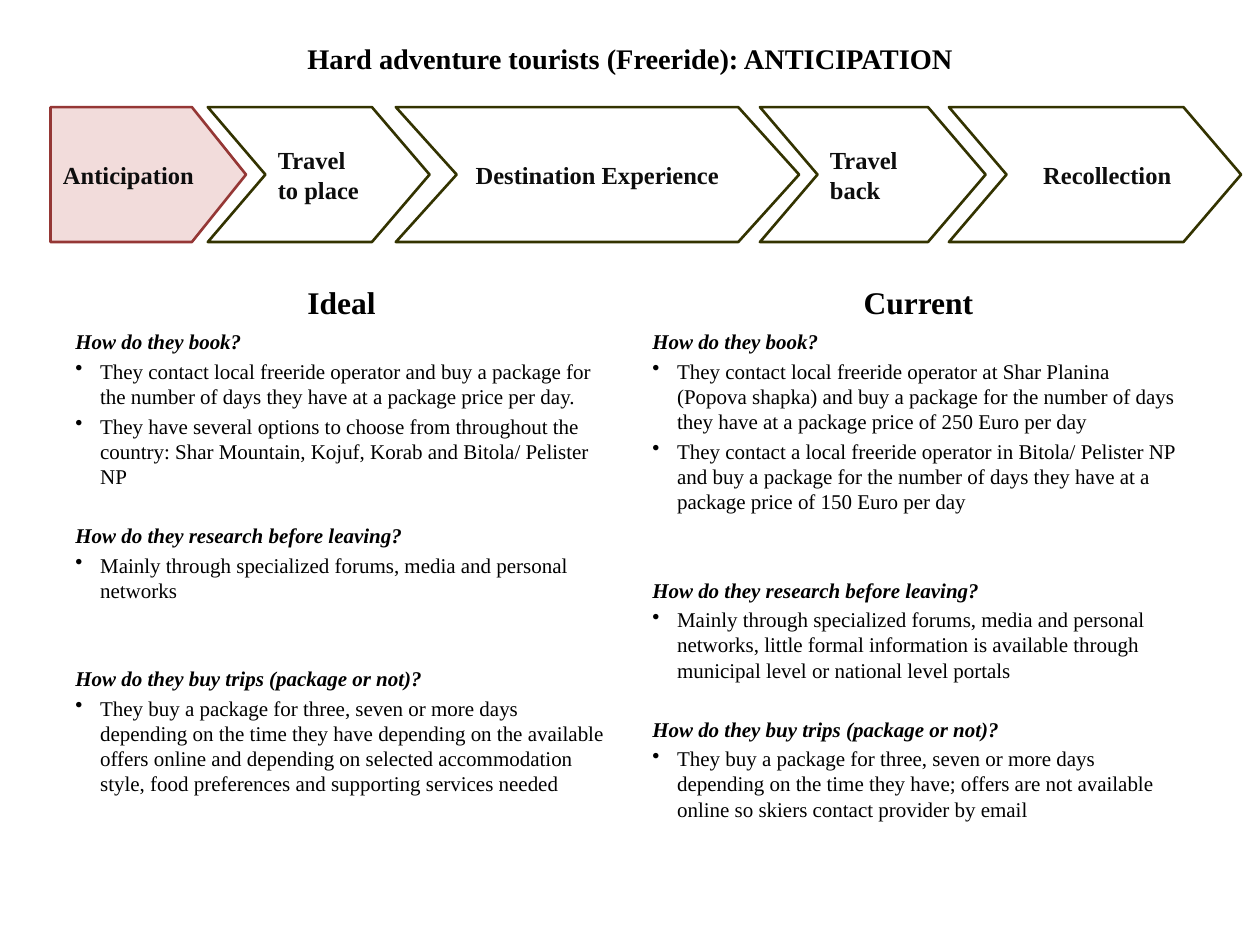
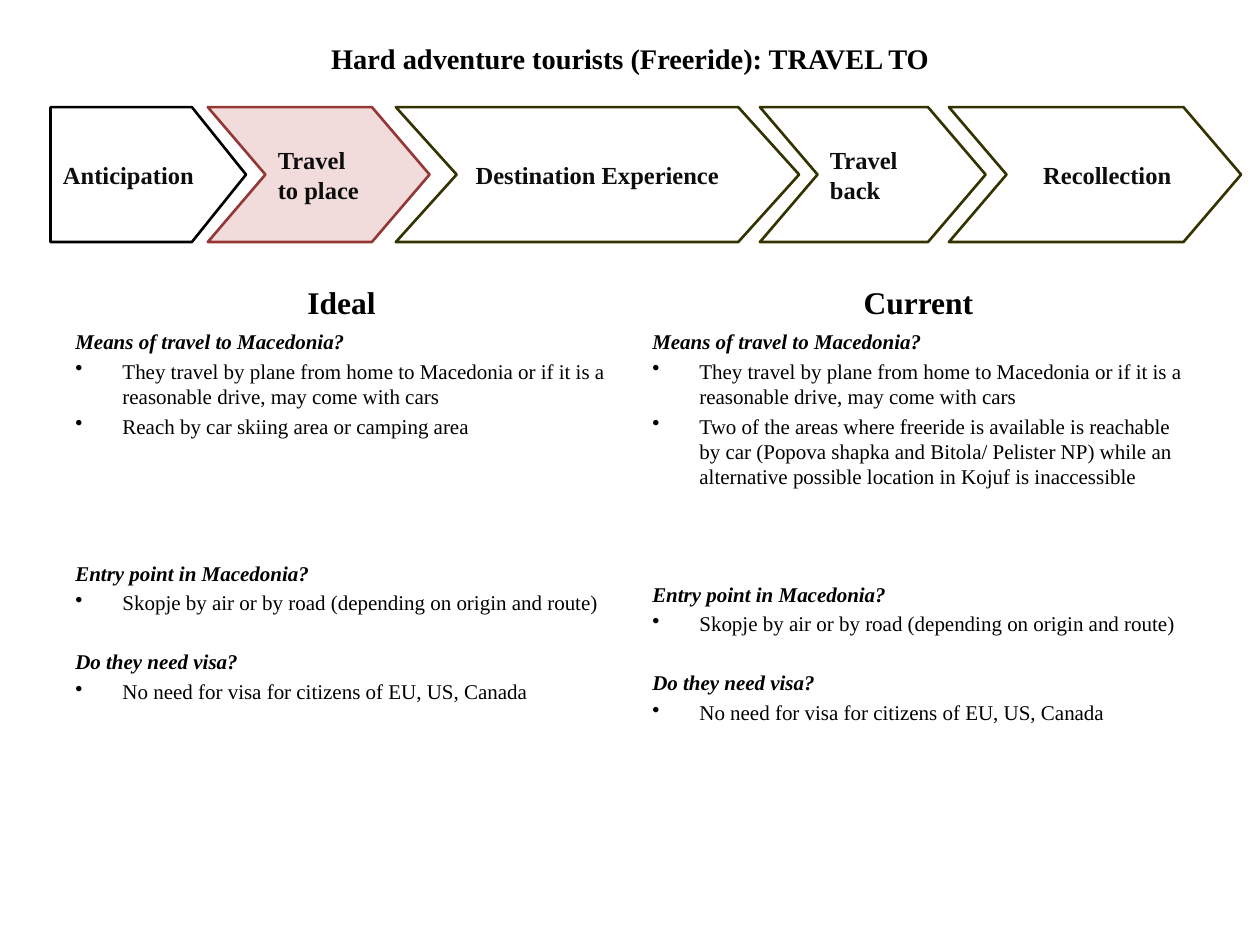
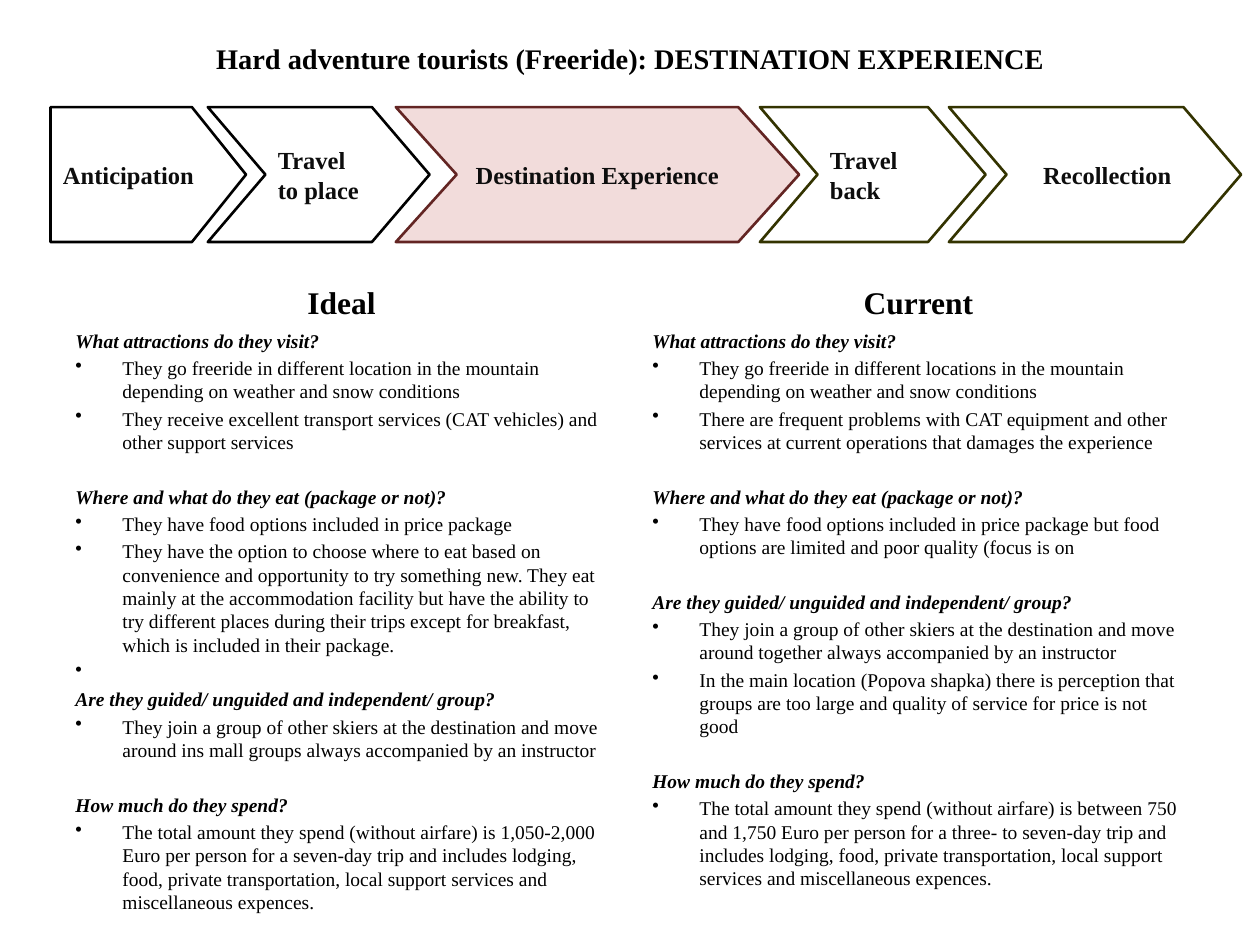
from dataclasses import dataclass

from lxml.etree import SubElement
from pptx import Presentation
from pptx.dml.color import RGBColor
from pptx.enum.shapes import MSO_SHAPE
from pptx.enum.text import MSO_ANCHOR, PP_ALIGN
from pptx.oxml.ns import qn
from pptx.util import Cm, Pt

FONT = "Times New Roman"
BLACK = RGBColor(0x00, 0x00, 0x00)
WHITE = RGBColor(0xFF, 0xFF, 0xFF)
CHARCOAL = RGBColor(0x0D, 0x0D, 0x0D)
OLIVE = RGBColor(0x33, 0x33, 0x00)
PINK = RGBColor(0xF2, 0xDC, 0xDB)
RED = RGBColor(0x95, 0x37, 0x35)
DARK_RED = RGBColor(0x63, 0x25, 0x23)

COLUMNS = {"Ideal": 1.27, "Current": 12.9}
COLUMN_WIDTH = 11.23


@dataclass
class Stage:
    label: str
    left: float
    width: float
    point: float = 0.427
    preset: MSO_SHAPE = MSO_SHAPE.CHEVRON
    align: PP_ALIGN = PP_ALIGN.LEFT
    inset_left: float = 0.25
    inset_right: float = 0.13


STAGES = [
    Stage("Anticipation", 1.02, 3.94, 0.401, MSO_SHAPE.PENTAGON),
    Stage("Travel to place", 4.19, 4.47),
    Stage("Destination Experience", 7.98, 8.13, 0.451,
          align=PP_ALIGN.CENTER, inset_right=0.25),
    Stage("Travel back", 15.32, 4.55),
    Stage("Recollection", 19.13, 5.89, inset_left=0.74),
]


@dataclass
class Section:
    question: str
    answers: list
    lines_above: int = 1


@dataclass
class Topic:
    name: str
    accent: RGBColor
    size: float
    indent: float
    columns: dict


TOPICS = [
    Topic("ANTICIPATION", RED, 12, 0.5, {
        "Ideal": [
            Section("How do they book?", [
                "They contact local freeride operator and buy a package for the number of days "
                "they have at a package price per day.",
                "They have several options to choose from throughout the country: Shar Mountain, "
                "Kojuf, Korab and Bitola/ Pelister NP"]),
            Section("How do they research before leaving?", [
                "Mainly through specialized forums, media and personal networks"]),
            Section("How do they buy trips (package or not)?", [
                "They buy a package for three, seven or more days depending on the time they have "
                "depending on the available offers online and depending on selected accommodation "
                "style, food preferences and supporting services needed"], 2),
        ],
        "Current": [
            Section("How do they book?", [
                "They contact local freeride operator at Shar Planina (Popova shapka) and buy a "
                "package for the number of days they have at a package price of 250 Euro per day",
                "They contact a local freeride operator in Bitola/ Pelister NP and buy a package "
                "for the number of days they have at a package price of 150 Euro per day"]),
            Section("How do they research before leaving?", [
                "Mainly through specialized forums, media and personal networks, little formal "
                "information is available through municipal level or national level portals"], 2),
            Section("How do they buy trips (package or not)?", [
                "They buy a package for three, seven or more days depending on the time they have; "
                "offers are not available online so skiers contact provider by email"]),
        ],
    }),
    Topic("TRAVEL TO", RED, 12, 0.95, {
        "Ideal": [
            Section("Means of travel to Macedonia?", [
                "They travel by plane from home to Macedonia or if it is a reasonable drive, "
                "may come with cars",
                "Reach by car skiing area or camping area"]),
            Section("Entry point in Macedonia?", [
                "Skopje by air or by road (depending on origin and route)"], 4),
            Section("Do they need visa?", ["No need for visa for citizens of EU, US, Canada"]),
        ],
        "Current": [
            Section("Means of travel to Macedonia?", [
                "They travel by plane from home to Macedonia or if it is a reasonable drive, "
                "may come with cars",
                "Two of the areas where freeride is available is reachable by car (Popova shapka "
                "and Bitola/ Pelister NP) while an alternative possible location in Kojuf is "
                "inaccessible"]),
            Section("Entry point in Macedonia?", [
                "Skopje by air or by road (depending on origin and route)"], 3),
            Section("Do they need visa?", ["No need for visa for citizens of EU, US, Canada"]),
        ],
    }),
    Topic("DESTINATION EXPERIENCE", DARK_RED, 11.1, 0.95, {
        "Ideal": [
            Section("What attractions do they visit?", [
                "They go freeride in different location in the mountain depending on weather and "
                "snow conditions",
                "They receive excellent transport services (CAT vehicles) and other support "
                "services"]),
            Section("Where and what do they eat (package or not)?", [
                "They have food options included in price package",
                "They have the option to choose where to eat based on convenience and opportunity "
                "to try something new. They eat mainly at the accommodation facility but have the "
                "ability to try different places during their trips except for breakfast, which "
                "is included in their package.",
                " "]),
            Section("Are they guided/ unguided and independent/ group?", [
                "They join a group of other skiers at the destination and move around ins mall "
                "groups always accompanied by an instructor"], 0),
            Section("How much do they spend?", [
                "The total amount they spend (without airfare) is 1,050-2,000 Euro per person for "
                "a seven-day trip and includes lodging, food, private transportation, local "
                "support services and miscellaneous expences."]),
        ],
        "Current": [
            Section("What attractions do they visit?", [
                "They go freeride in different locations in the mountain depending on weather and "
                "snow conditions",
                "There are frequent problems with CAT equipment and other services at current "
                "operations that damages the experience"]),
            Section("Where and what do they eat (package or not)?", [
                "They have food options included in price package but food options are limited "
                "and poor quality (focus is on"]),
            Section("Are they guided/ unguided and independent/ group?", [
                "They join a group of other skiers at the destination and move around together "
                "always accompanied by an instructor",
                "In the main location (Popova shapka) there is perception that groups are too "
                "large and quality of service for price is not good"]),
            Section("How much do they spend?", [
                "The total amount they spend (without airfare) is between 750 and 1,750 Euro per "
                "person for a three- to seven-day trip and includes lodging, food, private "
                "transportation, local support services and miscellaneous expences."]),
        ],
    }),
]


class JourneyDeck:
    def __init__(self):
        self.deck = Presentation()
        self.deck.slide_width = Cm(25.4)
        self.deck.slide_height = Cm(19.05)
        self.page = None

    def add_page(self):
        self.page = self.deck.slides.add_slide(self.deck.slide_layouts[6])

    def fill_para(self, para, text, size, color=BLACK, bold=True, italic=False):
        para.text = text
        for span in para.runs:
            span.font.name = FONT
            span.font.size = Pt(size)
            span.font.color.rgb = color
            span.font.bold = bold
            span.font.italic = italic

    def add_box(self, left, top, width, height, anchor):
        box = self.page.shapes.add_textbox(Cm(left), Cm(top), Cm(width), Cm(height))
        frame = box.text_frame
        frame.word_wrap = True
        frame.vertical_anchor = anchor
        return frame

    def add_heading(self, text, size, left, top, width, height, anchor):
        para = self.add_box(left, top, width, height, anchor).paragraphs[0]
        self.fill_para(para, text, size)
        para.alignment = PP_ALIGN.CENTER

    def add_stage(self, stage, fill, line):
        arrow = self.page.shapes.add_shape(
            stage.preset, Cm(stage.left), Cm(2.16), Cm(stage.width), Cm(2.72))
        arrow.adjustments[0] = stage.point
        arrow.shadow.inherit = False
        if fill is None:
            arrow.fill.background()
        else:
            arrow.fill.solid()
            arrow.fill.fore_color.rgb = fill
        arrow.line.color.rgb = line
        arrow.line.width = Pt(1.5)
        frame = arrow.text_frame
        frame.word_wrap = True
        frame.vertical_anchor = MSO_ANCHOR.MIDDLE
        frame.margin_left = Cm(stage.inset_left)
        frame.margin_right = Cm(stage.inset_right)
        self.fill_para(frame.paragraphs[0], stage.label, 14, CHARCOAL)
        frame.paragraphs[0].alignment = stage.align

    def add_journey(self, active, accent):
        for index, stage in enumerate(STAGES):
            if index < active:
                self.add_stage(stage, None, BLACK)
            elif index == active:
                self.add_stage(stage, PINK, accent)
            else:
                self.add_stage(stage, WHITE, OLIVE)

    def add_bullet(self, para, indent):
        properties = para._p.get_or_add_pPr()
        properties.set("marL", str(Cm(indent)))
        properties.set("indent", str(-Cm(indent)))
        SubElement(properties, qn("a:buChar")).set("char", "•")

    def add_sections(self, sections, left, size, indent):
        frame = self.add_box(left, 6.5, COLUMN_WIDTH, 12.09, MSO_ANCHOR.TOP)
        spacing = 0.21 * size
        for index, section in enumerate(sections):
            para = frame.add_paragraph() if index else frame.paragraphs[0]
            self.fill_para(para, section.question, size, italic=True)
            para.space_before = Pt(spacing + section.lines_above * 1.4 * size if index else 0)
            for answer in section.answers:
                para = frame.add_paragraph()
                self.fill_para(para, answer, size, bold=False)
                para.space_before = Pt(spacing)
                self.add_bullet(para, indent)


def main():
    journey = JourneyDeck()
    for active, topic in enumerate(TOPICS):
        journey.add_page()
        journey.add_heading(f"Hard adventure tourists (Freeride): {topic.name}", 16.2,
                            1.27, 0.76, 22.86, 0.84, MSO_ANCHOR.MIDDLE)
        for name, left in COLUMNS.items():
            journey.add_heading(name, 18, left, 5.33, COLUMN_WIDTH, 1.27, MSO_ANCHOR.BOTTOM)
            journey.add_sections(topic.columns[name], left, topic.size, topic.indent)
        journey.add_journey(active, topic.accent)
    journey.deck.save("out.pptx")


if __name__ == "__main__":
    main()
